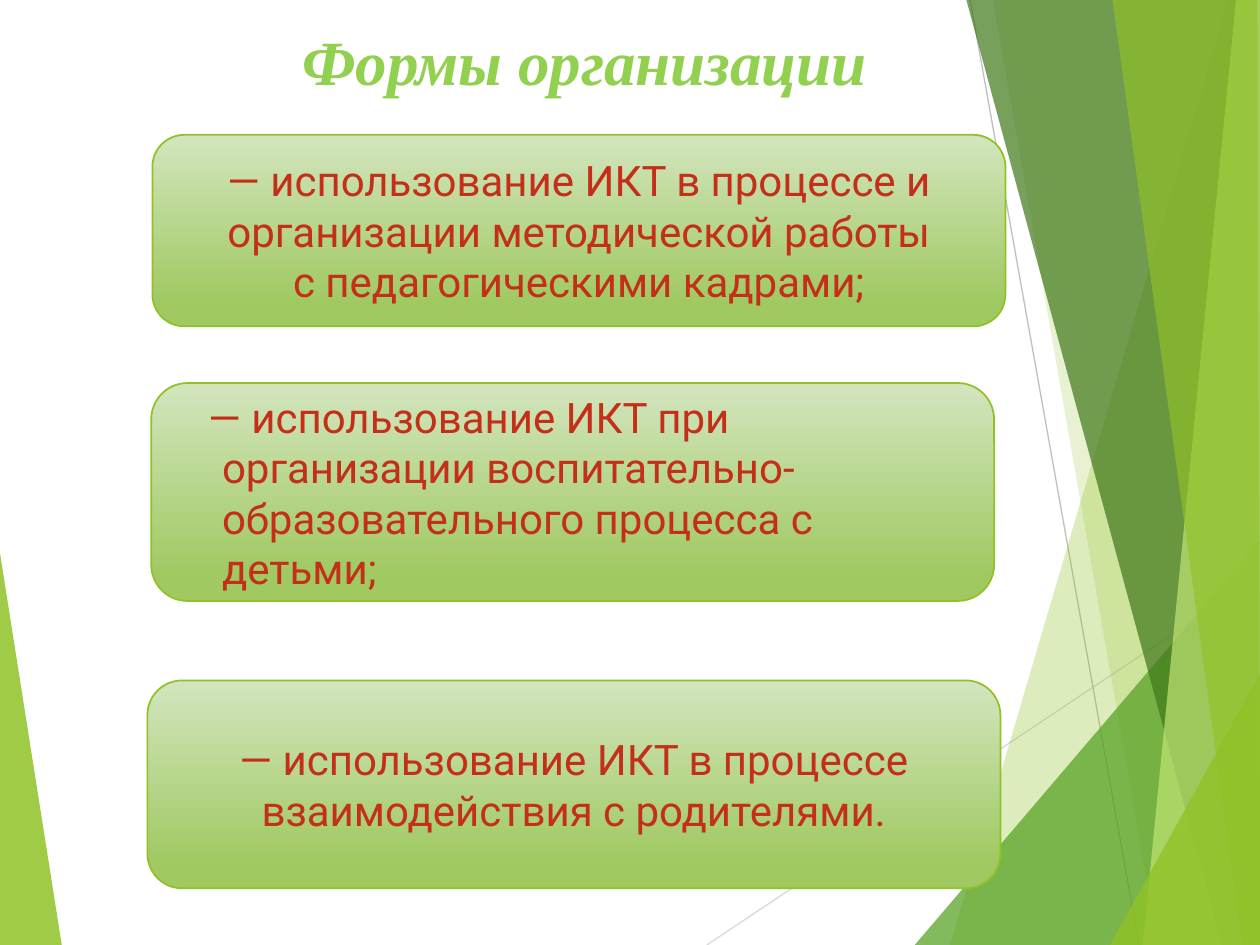
from lxml.etree import SubElement
from pptx import Presentation
from pptx.dml.color import RGBColor
from pptx.enum.shapes import MSO_CONNECTOR, MSO_SHAPE
from pptx.enum.text import MSO_ANCHOR, PP_ALIGN
from pptx.oxml.ns import qn
from pptx.util import Inches, Pt

THEME = {
    "lime": "90C226", "leaf": "54A021", "forest": "3F7819", "pale": "C0E474",
    "light_line": "D9D9D9", "grey_line": "BFBFBF",
    "title": "92D050", "text": "C42F1A",
    "card_top": "D3E5BE", "card_bottom": "A0C962",
    "title_font": "Times New Roman", "text_font": "Roboto",
    "title_size": Pt(36), "text_size": Pt(24),
    "card_line": Pt(1), "thin_line": Pt(0.75),
}

TITLE = "Формы организации"
TITLE_BOX = (1.17, 0.13, 6.94, 1.44)

# text, (left, top, width, height), alignment, (left margin, first-line indent)
CARDS = [
    ("— использование ИКТ при организации воспитательно-образовательного процесса с детьми;",
     (1.2, 3.04, 6.69, 1.73), PP_ALIGN.LEFT, (0.38, -0.11)),
    ("— использование ИКТ в процессе и организации методической работы с\u00a0педагогическими кадрами;",
     (1.21, 1.07, 6.77, 1.52), PP_ALIGN.CENTER, None),
    ("— использование ИКТ в процессе взаимодействия с родителями.",
     (1.17, 5.4, 6.77, 1.65), PP_ALIGN.CENTER, None),
]

# colour, opacity in percent, corners
LEFT_FACET = ("lime", 85, [(0, 4.39), (0.49, 7.5), (0, 7.5)])
LINES = [
    ("light_line", (5.61, 7.5), (10, 4.57)),
    ("grey_line", (7.7, 0), (9.04, 7.5)),
]
RIGHT_FACETS = [
    ("lime", 30, [(9.75, 0), (7.54, 7.5), (10, 7.5), (10, 0)]),
    ("lime", 20, [(7.88, 0), (9.19, 7.5), (10, 7.5), (10, 0)]),
    ("leaf", 72, [(7.26, 7.5), (10, 4.29), (10, 7.5)]),
    ("forest", 70, [(7.67, 0), (9.7, 7.5), (10, 7.5), (10, 0)]),
    ("pale", 70, [(9.81, 0), (9.07, 7.5), (10, 7.5), (10, 0)]),
    ("lime", 65, [(8.83, 0), (9.86, 7.5), (10, 7.5), (9.98, 0)]),
    ("lime", 80, [(8.81, 7.5), (10, 5.35), (10, 7.5)]),
]


def color(name):
    return RGBColor.from_string(THEME[name])


def add_facet(slide, fill_name, opacity, corners):
    points = [(Inches(x), Inches(y)) for x, y in corners]
    builder = slide.shapes.build_freeform(*points[0])
    builder.add_line_segments(points[1:])
    shape = builder.convert_to_shape()
    shape.shadow.inherit = False
    shape.fill.solid()
    shape.fill.fore_color.rgb = color(fill_name)
    fill_color = shape.element.spPr.find(".//" + qn("a:srgbClr"))
    SubElement(fill_color, qn("a:alpha"), val=str(opacity * 1000))
    shape.line.fill.background()


def add_thin_line(slide, line_name, start, end):
    connector = slide.shapes.add_connector(
        MSO_CONNECTOR.STRAIGHT, *(Inches(value) for value in start + end))
    connector.line.color.rgb = color(line_name)
    connector.line.width = THEME["thin_line"]
    SubElement(connector.element.spPr, qn("a:effectLst"))


def add_title(slide):
    title = slide.shapes.title
    title.left, title.top, title.width, title.height = map(Inches, TITLE_BOX)
    title.text_frame.text = TITLE
    title.text_frame.vertical_anchor = MSO_ANCHOR.TOP
    paragraph = title.text_frame.paragraphs[0]
    paragraph.alignment = PP_ALIGN.CENTER
    font = paragraph.font
    font.name, font.size = THEME["title_font"], THEME["title_size"]
    font.bold = font.italic = True
    font.color.rgb = color("title")


def add_card(slide, text, box, alignment, indents):
    shape = slide.shapes.add_shape(
        MSO_SHAPE.FLOWCHART_ALTERNATE_PROCESS, *map(Inches, box))
    shape.shadow.inherit = False
    shape.fill.gradient()
    shape.fill.gradient_angle = 270
    top_stop, bottom_stop = shape.fill.gradient_stops
    top_stop.position, bottom_stop.position = 0, 0.88
    top_stop.color.rgb = color("card_top")
    bottom_stop.color.rgb = color("card_bottom")
    shape.line.color.rgb = color("lime")
    shape.line.width = THEME["card_line"]

    frame = shape.text_frame
    frame.word_wrap = True
    frame.vertical_anchor = MSO_ANCHOR.MIDDLE
    frame.text = text
    paragraph = frame.paragraphs[0]
    paragraph.alignment = alignment
    if indents:
        margin, indent = map(Inches, indents)
        properties = paragraph._p.get_or_add_pPr()
        properties.set("marL", str(margin))
        properties.set("indent", str(indent))
    font = paragraph.font
    font.name, font.size = THEME["text_font"], THEME["text_size"]
    font.color.rgb = color("text")


def main():
    presentation = Presentation()
    presentation.slide_width, presentation.slide_height = Inches(10), Inches(7.5)
    slide = presentation.slides.add_slide(presentation.slide_layouts[5])
    add_facet(slide, *LEFT_FACET)
    for line in LINES:
        add_thin_line(slide, *line)
    for facet in RIGHT_FACETS:
        add_facet(slide, *facet)
    add_title(slide)
    for card in CARDS:
        add_card(slide, *card)
    presentation.save("out.pptx")


if __name__ == "__main__":
    main()
